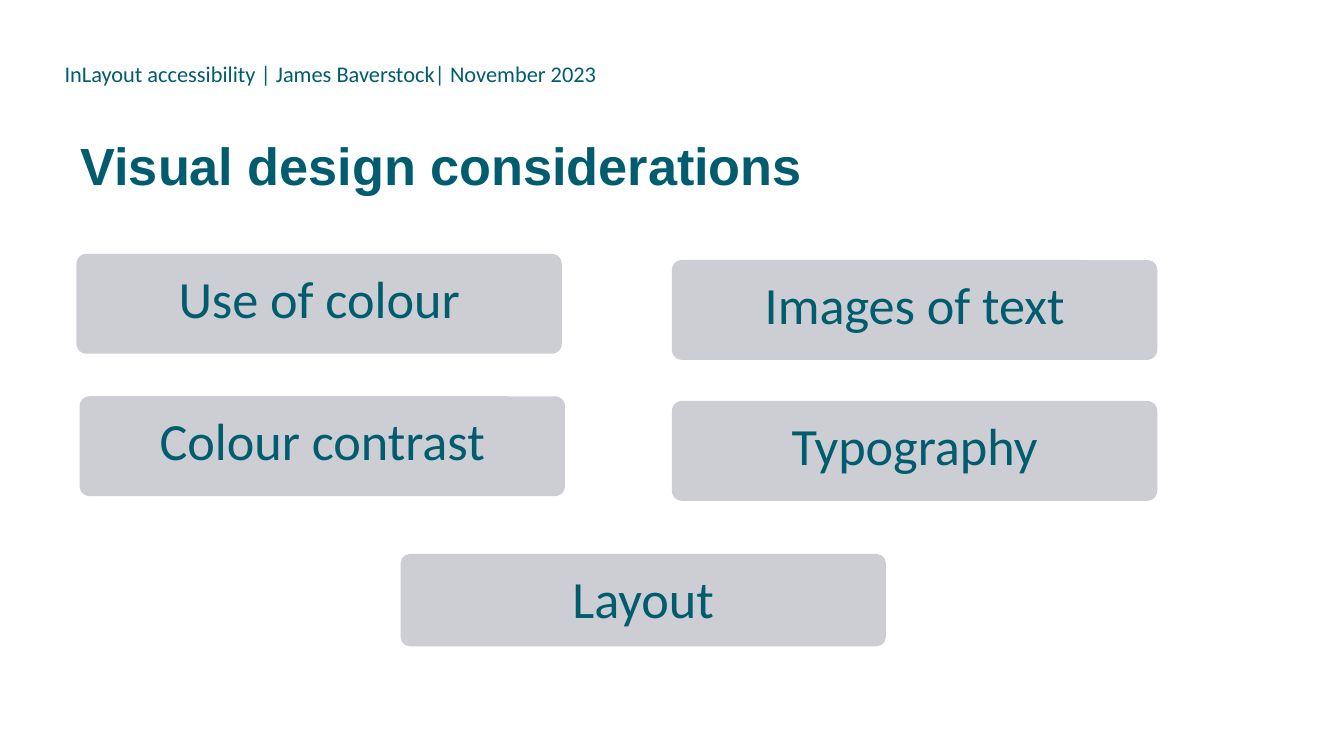
"""Build the slide on visual design considerations for accessible documents."""
import pptx
import pptx.dml.color
import pptx.enum.shapes
import pptx.enum.text
import pptx.util

Pt = pptx.util.Pt
RGB = pptx.dml.color.RGBColor
ANCHOR = pptx.enum.text.MSO_ANCHOR
ALIGN = pptx.enum.text.PP_ALIGN

THEME = {
    "ink": RGB.from_string("005C6E"),
    "panel": RGB.from_string("CCCED3"),
    "heading_font": "Arial",
    "body_font": "Calibri",
    "large": Pt(28),
    "small": Pt(12),
}


def write(frame, text, font_name, size, align, anchor, bold=False):
    frame.word_wrap = True
    frame.auto_size = pptx.enum.text.MSO_AUTO_SIZE.NONE
    frame.vertical_anchor = anchor
    paragraph = frame.paragraphs[0]
    paragraph.text = text
    paragraph.alignment = align
    paragraph.font.name = font_name
    paragraph.font.size = size
    paragraph.font.bold = bold
    paragraph.font.color.rgb = THEME["ink"]


presentation = pptx.Presentation()
presentation.slide_width, presentation.slide_height = Pt(720), Pt(405)
slide = presentation.slides.add_slide(presentation.slide_layouts[5])

running_header = slide.shapes.add_textbox(Pt(27.5), Pt(28.8), Pt(427), Pt(21.6))
write(running_header.text_frame,
      "InLayout accessibility | James Baverstock| November 2023",
      THEME["body_font"], THEME["small"], ALIGN.LEFT, ANCHOR.TOP)

heading = slide.shapes.title
heading.left, heading.top, heading.width, heading.height = Pt(36), Pt(45.4), Pt(648), Pt(63.4)
write(heading.text_frame, "Visual design considerations",
      THEME["heading_font"], THEME["large"], ALIGN.LEFT, ANCHOR.BOTTOM, bold=True)

considerations = [
    ("Use of colour", 41, 136, 53.5),
    ("Images of text", 360, 139.3, 53.5),
    ("Colour contrast", 42.7, 212.3, 53.5),
    ("Typography", 360, 214.8, 53.5),
    ("Layout", 214.6, 296.8, 49.5),
]
for topic, left, top, height in considerations:
    panel = slide.shapes.add_shape(pptx.enum.shapes.MSO_SHAPE.ROUNDED_RECTANGLE,
                                   Pt(left), Pt(top), Pt(260), Pt(height))
    panel.adjustments[0] = 0.1
    panel.shadow.inherit = False
    panel.fill.solid()
    panel.fill.fore_color.rgb = THEME["panel"]
    panel.line.fill.background()
    panel.text_frame.margin_top = Pt(5)
    write(panel.text_frame, topic, THEME["body_font"], THEME["large"],
          ALIGN.CENTER, ANCHOR.TOP)

presentation.save("out.pptx")
